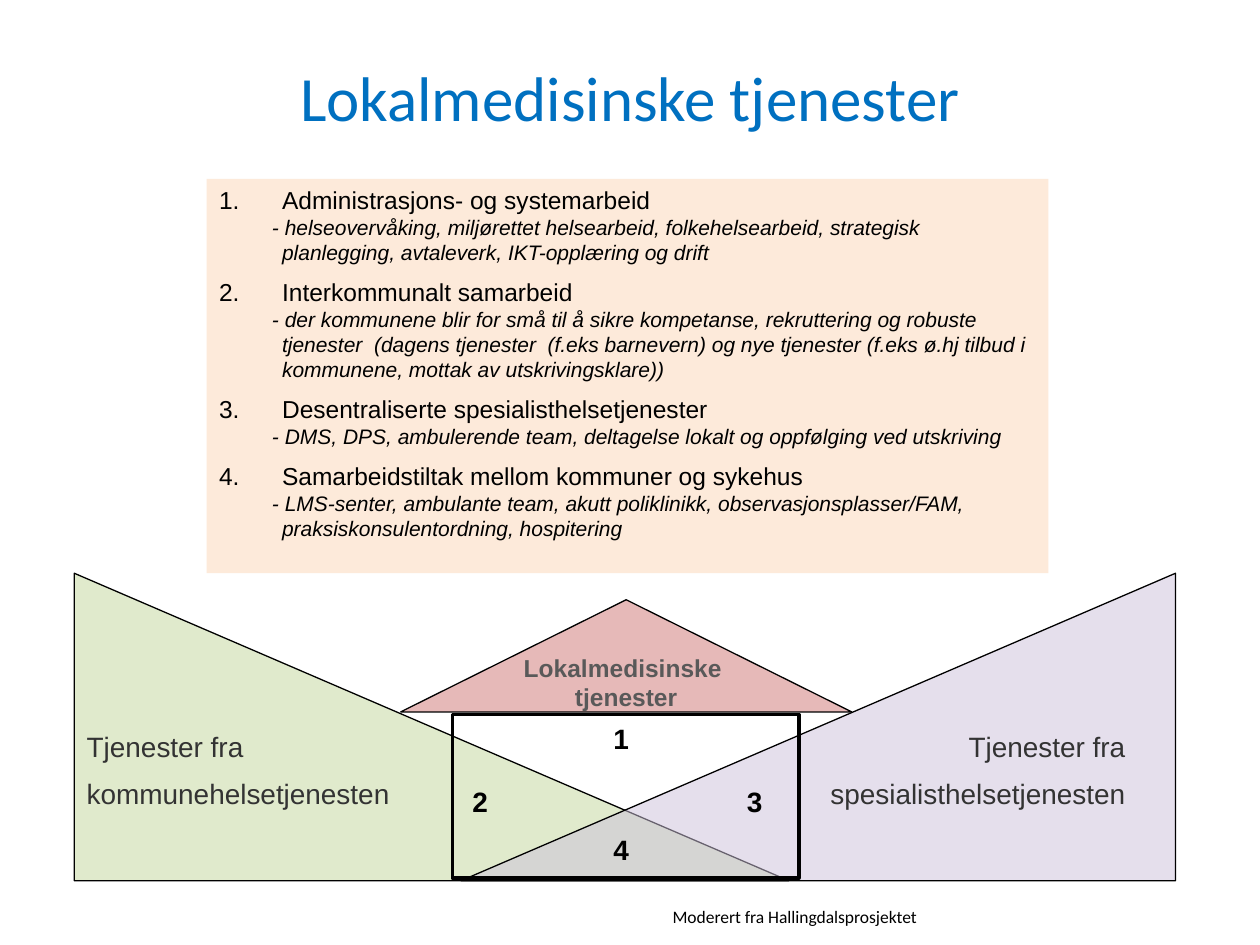
from lxml.etree import SubElement
from pptx import Presentation
from pptx.dml.color import RGBColor
from pptx.enum.shapes import MSO_SHAPE
from pptx.enum.text import MSO_ANCHOR, PP_ALIGN
from pptx.oxml.ns import qn
from pptx.util import Inches, Pt

BLACK = RGBColor(0x00, 0x00, 0x00)
BLUE = RGBColor(0x00, 0x70, 0xC0)
GREEN = RGBColor(0xC3, 0xD6, 0x9B)
PURPLE = RGBColor(0xCC, 0xC1, 0xDA)
ROSE = RGBColor(0xE6, 0xB9, 0xB8)
PEACH = RGBColor(0xFD, 0xEA, 0xDA)
GREY = RGBColor(0x59, 0x59, 0x59)
DARK = RGBColor(0x33, 0x33, 0x33)

TITLE = "Lokalmedisinske tjenester"
ITEMS = [
    ("Administrasjons- og systemarbeid",
     "helseovervåking, miljørettet helsearbeid, folkehelsearbeid, strategisk "
     "planlegging, avtaleverk, IKT-opplæring og drift"),
    ("Interkommunalt samarbeid",
     "der kommunene blir for små til å sikre kompetanse, rekruttering og robuste "
     "tjenester  (dagens tjenester  (f.eks barnevern) og nye tjenester "
     "(f.eks ø.hj tilbud i kommunene, mottak av utskrivingsklare))"),
    ("Desentraliserte spesialisthelsetjenester",
     "DMS, DPS, ambulerende team, deltagelse lokalt og oppfølging ved utskriving"),
    ("Samarbeidstiltak mellom kommuner og sykehus",
     "LMS-senter, ambulante team, akutt poliklinikk, observasjonsplasser/FAM, "
     "praksiskonsulentordning, hospitering"),
]
ROOF = ["Lokalmedisinske ", "tjenester"]
# Side labels: lines, left, width, alignment
SIDES = [
    (["Tjenester fra", "kommunehelsetjenesten"], 0.59, 2.9, PP_ALIGN.LEFT),
    (["Tjenester fra", "spesialisthelsetjenesten"], 6.43, 2.6, PP_ALIGN.RIGHT),
]
# Zone numbers: text, centre x, centre y
ZONES = [("1", 4.93, 5.86), ("2", 3.81, 6.36), ("3", 5.99, 6.36), ("4", 4.93, 6.74)]
SOURCE = "Moderert fra Hallingdalsprosjektet"

deck = Presentation()
deck.slide_width, deck.slide_height = Inches(10), Inches(7.5)
slide = deck.slides.add_slide(deck.slide_layouts[6])


def add_shape(kind, box, fill=None, line=None, alpha=None):
    shape = slide.shapes.add_shape(kind, *map(Inches, box))
    shape.shadow.inherit = False
    if fill is None:
        shape.fill.background()
    else:
        shape.fill.solid()
        shape.fill.fore_color.rgb = fill
    if alpha:
        tint = shape.fill._xPr.find(qn("a:solidFill"))[0]
        SubElement(tint, qn("a:alpha")).set("val", str(alpha * 1000))
    if line is None:
        shape.line.fill.background()
    else:
        shape.line.color.rgb = BLACK
        shape.line.width = Pt(line)
    return shape


def style(para, size, color=BLACK, font="Arial", bold=False, italic=False):
    for run in para.runs:
        run.font.name, run.font.size = font, Pt(size)
        run.font.color.rgb = color
        run.font.bold, run.font.italic = bold, italic


def write(frame, lines, size, align=PP_ALIGN.LEFT, gap=0, **look):
    frame.text = "\n".join(lines)
    for i, para in enumerate(frame.paragraphs):
        para.alignment = align
        para.space_before = Pt(gap if i else 0)
        style(para, size, **look)


def add_text(box, lines, size, wrap=True, anchor=MSO_ANCHOR.TOP, **look):
    frame = slide.shapes.add_textbox(*map(Inches, box)).text_frame
    frame.word_wrap, frame.vertical_anchor = wrap, anchor
    write(frame, lines, size, **look)


def hang(para, first, start=None):
    props = para._p.get_or_add_pPr()
    props.set("marL", str(Inches(0.5)))
    props.set("indent", str(Inches(first)))
    if start:
        mark = SubElement(props, qn("a:buAutoNum"))
        mark.set("type", "arabicPeriod")
        mark.set("startAt", str(start))


# Title
add_text((0.5, 0.3, 9, 0.93), [TITLE], 36, anchor=MSO_ANCHOR.MIDDLE,
         align=PP_ALIGN.CENTER, color=BLUE, font="Calibri")

# Overlapping service wedges and the roof
add_shape(MSO_SHAPE.RIGHT_TRIANGLE, (0.59, 4.55, 5.67, 2.44), GREEN, 0.75, 51)
wedge = add_shape(MSO_SHAPE.RIGHT_TRIANGLE, (3.66, 4.55, 5.67, 2.44), PURPLE, 0.75, 51)
wedge._element.spPr.get_or_add_xfrm().set("flipH", "1")
roof = add_shape(MSO_SHAPE.ISOSCELES_TRIANGLE, (3.18, 4.76, 3.58, 0.89), ROSE, 0.75)
frame = roof.text_frame
frame.word_wrap, frame.vertical_anchor = False, MSO_ANCHOR.BOTTOM
frame.margin_bottom = 0
write(frame, ROOF, 14, align=PP_ALIGN.CENTER, color=GREY, bold=True)

# Side labels
for lines, left, width, align in SIDES:
    add_text((left, 5.74, width, 0.77), lines, 16, align=align, gap=8, color=DARK)

# Frame with numbered zones
add_shape(MSO_SHAPE.RECTANGLE, (3.59, 5.67, 2.75, 1.3), line=2)
for text, x, y in ZONES:
    add_text((x - 0.2, y - 0.18, 0.4, 0.36), [text], 16,
             anchor=MSO_ANCHOR.MIDDLE, align=PP_ALIGN.CENTER, bold=True)

# Numbered list of services
panel = add_shape(MSO_SHAPE.RECTANGLE, (1.64, 1.42, 6.68, 3.13), PEACH)
frame = panel.text_frame
frame.vertical_anchor = MSO_ANCHOR.TOP
for num, (head, detail) in enumerate(ITEMS, 1):
    para = frame.paragraphs[0] if num == 1 else frame.add_paragraph()
    para.text = head
    para.alignment = PP_ALIGN.LEFT
    para.space_before = Pt(7 if num > 1 else 0)
    hang(para, -0.5, num)
    style(para, 14)
    para = frame.add_paragraph()
    para.text = "- " + detail
    para.alignment = PP_ALIGN.LEFT
    hang(para, -0.08)
    style(para, 12, italic=True)

# Source line
add_text((5.24, 7.14, 2.17, 0.27), [SOURCE], 10, wrap=False, font="Calibri")

deck.save("out.pptx")
